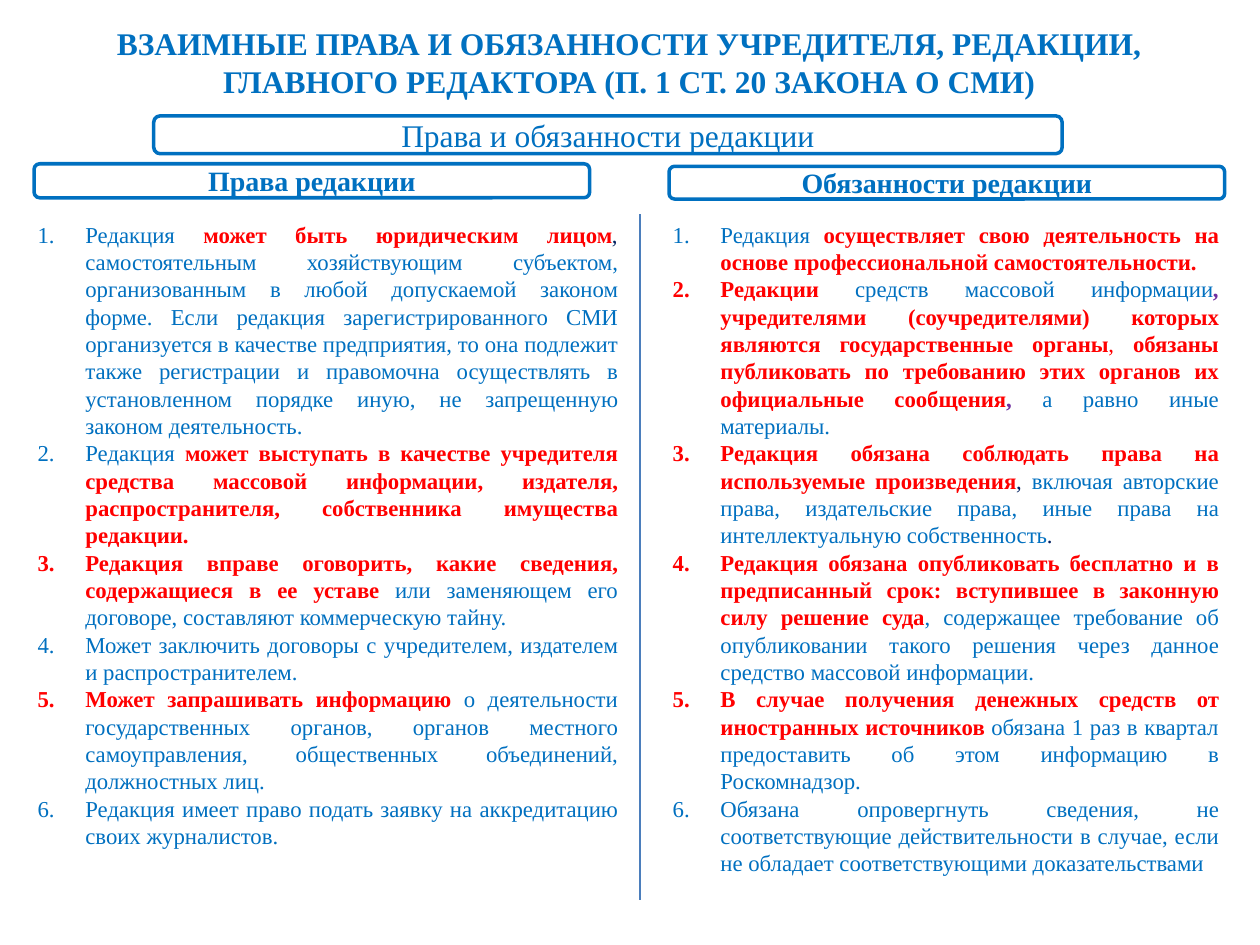
"""Build a slide on the mutual rights and duties of a media editorial office."""
from lxml.etree import SubElement
from pptx import Presentation
from pptx.dml.color import RGBColor
from pptx.enum.shapes import MSO_CONNECTOR as CONNECTOR, MSO_SHAPE as SHAPE
from pptx.enum.text import MSO_ANCHOR as ANCHOR, MSO_AUTO_SIZE as AUTO_SIZE, PP_ALIGN as ALIGN
from pptx.oxml.ns import qn
from pptx.util import Inches, Pt

BLUE = RGBColor(0x00, 0x70, 0xC0)
RED = RGBColor(0xFF, 0x00, 0x00)
NAVY = RGBColor(0x00, 0x20, 0x60)
PURPLE = RGBColor(0x70, 0x30, 0xA0)
DIVIDER_BLUE = RGBColor(0x4B, 0x7E, 0xBC)
WHITE = RGBColor(0xFF, 0xFF, 0xFF)
FONT = "Times New Roman"

PLAIN = (BLUE, False)
KEY = (RED, True)
RED_PLAIN = (RED, False)
NAVY_PLAIN = (NAVY, False)
PURPLE_BOLD = (PURPLE, True)

RIGHTS = [
    [("Редакция ", PLAIN), ("может быть юридическим лицом", KEY), (", ", NAVY_PLAIN),
     ("самостоятельным хозяйствующим субъектом, организованным в любой допускаемой законом "
      "форме. Если редакция зарегистрированного СМИ организуется в качестве предприятия, то "
      "она подлежит также регистрации и правомочна осуществлять в установленном порядке иную, "
      "не запрещенную законом деятельность.", PLAIN)],
    [("Редакция ", PLAIN),
     ("может выступать в качестве учредителя средства массовой информации, издателя, "
      "распространителя, собственника имущества редакции.", KEY)],
    [("Редакция вправе оговорить, какие сведения, содержащиеся в ее уставе ", KEY),
     ("или заменяющем его договоре, составляют коммерческую тайну.", PLAIN)],
    [("Может заключить договоры с учредителем, издателем и распространителем.", PLAIN)],
    [("Может запрашивать информацию ", KEY),
     ("о деятельности государственных органов, органов местного самоуправления, "
      "общественных объединений, должностных лиц.", PLAIN)],
    [("Редакция имеет право подать заявку на аккредитацию своих журналистов.", PLAIN)],
]
DUTIES = [
    [("Редакция ", PLAIN),
     ("осуществляет свою деятельность на основе профессиональной самостоятельности.", KEY)],
    [("Редакции ", KEY), ("средств массовой информации", PLAIN), (", ", PURPLE_BOLD),
     ("учредителями (соучредителями) которых являются государственные органы", KEY),
     (", ", RED_PLAIN),
     ("обязаны публиковать по требованию этих органов их официальные сообщения", KEY),
     (", ", PURPLE_BOLD), ("а равно иные материалы.", PLAIN)],
    [("Редакция обязана соблюдать права на используемые произведения", KEY),
     (", ", NAVY_PLAIN),
     ("включая авторские права, издательские права, иные права на интеллектуальную "
      "собственность", PLAIN), (".", NAVY_PLAIN)],
    [("Редакция обязана опубликовать бесплатно и в предписанный срок: вступившее в законную "
      "силу решение суда", KEY),
     (", содержащее требование об опубликовании такого решения через данное средство "
      "массовой информации.", PLAIN)],
    [("В случае получения денежных средств от иностранных источников ", KEY),
     ("обязана 1 раз в квартал предоставить об этом информацию в Роскомнадзор.", PLAIN)],
    [("Обязана опровергнуть сведения, не соответствующие действительности в случае, если не "
      "обладает соответствующими доказательствами", PLAIN)],
]
HEADINGS = [
    ("Права и обязанности редакции", 1.22, 0.92, 7.21, 0.3, 18, False),
    ("Права редакции", 0.27, 1.3, 4.41, 0.27, 16, True),
    ("Обязанности редакции", 5.31, 1.32, 4.41, 0.26, 16, True),
]
COLUMNS = [(RIGHTS, 0.2, 4.8, 5.13), (DUTIES, 5.24, 4.53, 5.35)]


def style_heading(paragraph, size, bold):
    paragraph.alignment = ALIGN.CENTER
    paragraph.font.name = FONT
    paragraph.font.size = Pt(size)
    paragraph.font.bold = bold
    paragraph.font.color.rgb = BLUE


prs = Presentation()
prs.slide_width, prs.slide_height = Inches(10), Inches(7.5)
slide = prs.slides.add_slide(prs.slide_layouts[5])

title = slide.shapes.title
title.left, title.top = Inches(0.35), Inches(0.14)
title.width, title.height = Inches(9.29), Inches(1.01)
title.text_frame.text = ("ВЗАИМНЫЕ ПРАВА И ОБЯЗАННОСТИ УЧРЕДИТЕЛЯ, РЕДАКЦИИ, "
                         "ГЛАВНОГО РЕДАКТОРА (П. 1 СТ. 20 ЗАКОНА О СМИ)")
title.text_frame.vertical_anchor = ANCHOR.TOP
title.text_frame.auto_size = AUTO_SIZE.NONE
style_heading(title.text_frame.paragraphs[0], 18, True)

divider = slide.shapes.add_connector(
    CONNECTOR.STRAIGHT, Inches(5.08), Inches(1.7), Inches(5.08), Inches(7.14))
divider.line.color.rgb = DIVIDER_BLUE
divider.line.width = Pt(0.75)
SubElement(divider.element.spPr, qn("a:effectLst"))

for text, left, top, width, height, size, bold in HEADINGS:
    heading = slide.shapes.add_shape(
        SHAPE.ROUNDED_RECTANGLE, Inches(left), Inches(top), Inches(width), Inches(height))
    heading.shadow.inherit = False
    heading.fill.solid()
    heading.fill.fore_color.rgb = WHITE
    heading.line.color.rgb = BLUE
    heading.line.width = Pt(2)
    heading.text_frame.text = text
    heading.text_frame.vertical_anchor = ANCHOR.MIDDLE
    style_heading(heading.text_frame.paragraphs[0], size, bold)

for items, left, width, height in COLUMNS:
    column = slide.shapes.add_textbox(Inches(left), Inches(1.7), Inches(width), Inches(height))
    frame = column.text_frame
    frame.word_wrap = True
    for index, item in enumerate(items):
        paragraph = frame.add_paragraph() if index else frame.paragraphs[0]
        paragraph.alignment = ALIGN.JUSTIFY
        properties = paragraph._p.get_or_add_pPr()
        properties.set("marL", str(Inches(0.38)))
        properties.set("indent", str(Inches(-0.38)))
        SubElement(properties, qn("a:buFont"), typeface="+mj-lt")
        SubElement(properties, qn("a:buAutoNum"), type="arabicPeriod")
        paragraph.font.name = FONT
        paragraph.font.size = Pt(13)
        for text, (color, bold) in item:
            run = paragraph.add_run()
            run.text = text
            run.font.color.rgb = color
            run.font.bold = bold

prs.save("out.pptx")
